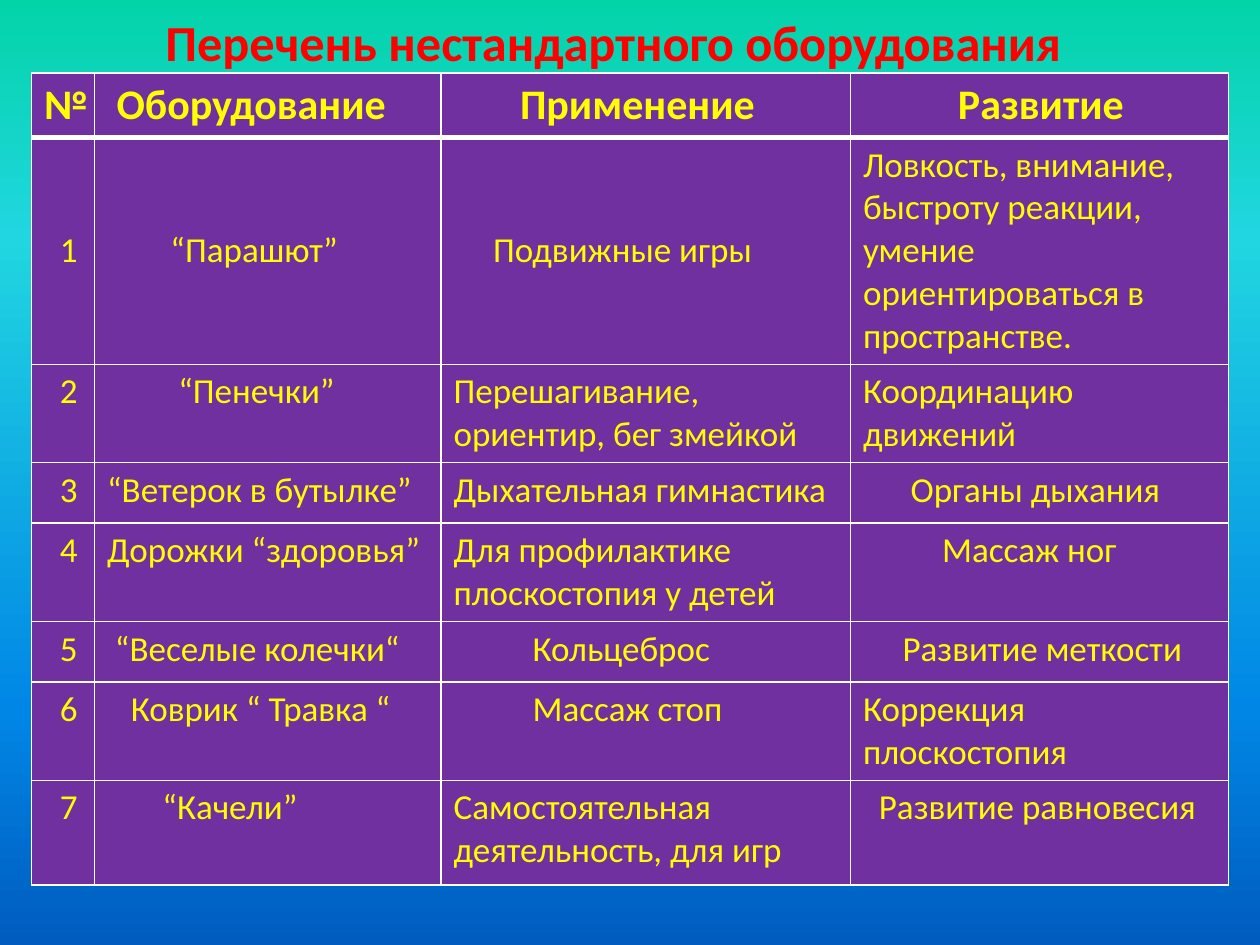
from lxml.etree import SubElement
from pptx import Presentation
from pptx.dml.color import RGBColor
from pptx.enum.text import MSO_ANCHOR, PP_ALIGN
from pptx.oxml.ns import qn
from pptx.util import Inches, Pt

FONT = "Calibri"
COLORS = {"title": "FF0000", "text": "FFFF00", "cell": "7030A0", "border": "FFFFFF"}
BACKGROUND = [(0, "03D4A8"), (25, "21D6E0"), (75, "0087E6"), (100, "005CBF")]

TITLE = "Перечень нестандартного оборудования"
# Each cell: text, indent in character spaces
ROWS = [
    [("№", 0), ("Оборудование", 1), ("Применение", 7), ("Развитие", 10)],
    [("1", 2), ("“Парашют”", 8), ("Подвижные игры", 5),
     ("Ловкость, внимание, быстроту реакции, умение ориентироваться в пространстве.", 0)],
    [("2", 2), ("“Пенечки”", 9), ("Перешагивание, ориентир, бег змейкой", 0),
     ("Координацию движений", 0)],
    [("3", 2), ("“Ветерок в бутылке”", 0), ("Дыхательная гимнастика", 0),
     ("Органы дыхания", 6)],
    [("4", 2), ("Дорожки “здоровья”", 0), ("Для профилактике плоскостопия у детей", 0),
     ("Массаж ног", 10)],
    [("5", 2), ("“Веселые колечки“", 1), ("Кольцеброс", 10), ("Развитие меткости", 5)],
    [("6", 2), ("Коврик “ Травка “", 3), ("Массаж стоп", 10),
     ("Коррекция плоскостопия", 0)],
    [("7", 2), ("“Качели”", 7), ("Самостоятельная деятельность, для игр", 0),
     ("Развитие равновесия", 2)],
]
COLUMN_WIDTHS = [0.5, 2.75, 3.25, 3]
ROW_HEIGHTS = [0.51, 1.8, 0.78, 0.48, 0.78, 0.48, 0.78, 0.83]
SPACE_SHARE = 0.226  # width of a space as a share of the text size


def color(name):
    return RGBColor.from_string(COLORS[name])


def add_text(paragraph, text, size, color_name, bold):
    run = paragraph.add_run()
    run.text = text
    run.font.name, run.font.size, run.font.bold = FONT, Pt(size), bold
    run.font.color.rgb = color(color_name)


def add_borders(cell, top, bottom):
    properties = cell._tc.get_or_add_tcPr()
    for side, width in (("L", 1), ("R", 1), ("T", top), ("B", bottom)):
        line = SubElement(properties, qn(f"a:ln{side}"), w=str(Pt(width)))
        fill = SubElement(line, qn("a:solidFill"))
        SubElement(fill, qn("a:srgbClr"), val=COLORS["border"])


def fill_background(slide):
    fill = slide.background.fill
    fill.gradient()
    fill.gradient_angle = 270  # counter-clockwise: top to bottom
    stops = fill._fill._gradFill.find(qn("a:gsLst"))
    stops.clear()
    for position, value in BACKGROUND:
        stop = SubElement(stops, qn("a:gs"), pos=str(position * 1000))
        SubElement(stop, qn("a:srgbClr"), val=value)


def add_title(slide):
    title = slide.shapes.title
    title.left, title.top = Inches(0.42), Inches(0.08)
    title.width, title.height = Inches(8.9), Inches(0.5)
    frame = title.text_frame
    frame.margin_top = frame.margin_bottom = 0
    frame.vertical_anchor = MSO_ANCHOR.MIDDLE
    paragraph = frame.paragraphs[0]
    paragraph.alignment = PP_ALIGN.CENTER
    add_text(paragraph, TITLE, 28.8, "title", True)


def add_equipment_table(slide):
    table = slide.shapes.add_table(
        len(ROWS), len(COLUMN_WIDTHS), Inches(0.25), Inches(0.58),
        Inches(sum(COLUMN_WIDTHS)), Inches(sum(ROW_HEIGHTS))).table
    for column, width in zip(table.columns, COLUMN_WIDTHS):
        column.width = Inches(width)
    for row, height in zip(table.rows, ROW_HEIGHTS):
        row.height = Inches(height)

    for row_index, row in enumerate(ROWS):
        header = row_index == 0
        size = 24 if header else 20
        for column_index, (text, spaces) in enumerate(row):
            cell = table.cell(row_index, column_index)
            add_borders(cell, 3 if row_index == 1 else 1, 3 if header else 1)
            cell.fill.solid()
            cell.fill.fore_color.rgb = color("cell")
            if row_index == 1:
                cell.vertical_anchor = MSO_ANCHOR.MIDDLE
            paragraph = cell.text_frame.paragraphs[0]
            indent = Pt(spaces * size * SPACE_SHARE)
            paragraph._p.get_or_add_pPr().set("marL", str(indent))
            add_text(paragraph, text, size, "text", header)


def main():
    presentation = Presentation()
    presentation.slide_width, presentation.slide_height = Inches(10), Inches(7.5)
    slide = presentation.slides.add_slide(presentation.slide_layouts[5])
    fill_background(slide)
    add_title(slide)
    add_equipment_table(slide)
    presentation.save("out.pptx")


if __name__ == "__main__":
    main()
